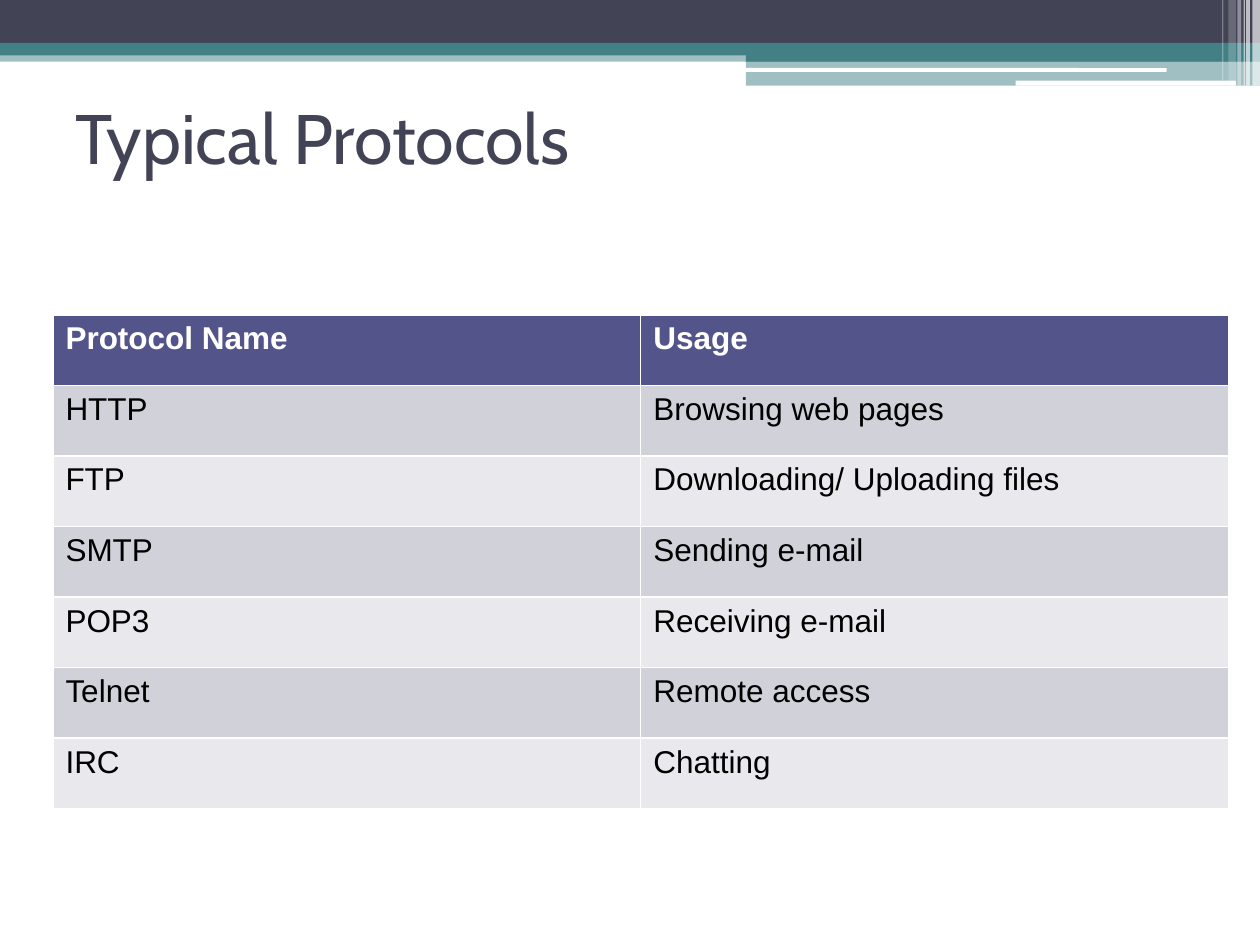
from lxml.etree import SubElement
from pptx import Presentation
from pptx.dml.color import RGBColor
from pptx.enum.shapes import MSO_SHAPE as Preset
from pptx.enum.text import MSO_ANCHOR, PP_ALIGN
from pptx.oxml.ns import qn
from pptx.util import Inches, Pt

WHITE = RGBColor(0xFF, 0xFF, 0xFF)
BLACK = RGBColor(0, 0, 0)
SLATE = RGBColor(0x42, 0x44, 0x56)
TEAL = RGBColor(0x43, 0x80, 0x86)
HEADER = RGBColor(0x53, 0x54, 0x8A)
ROW_BANDS = (RGBColor(0xD1, 0xD1, 0xDA), RGBColor(0xE9, 0xE9, 0xED))

TITLE = "Typical Protocols"
PROTOCOLS = [
    ("Protocol Name", "Usage"),
    ("HTTP", "Browsing web pages"),
    ("FTP", "Downloading/ Uploading files"),
    ("SMTP", "Sending e-mail"),
    ("POP3", "Receiving e-mail"),
    ("Telnet", "Remote access"),
    ("IRC", "Chatting"),
]

SLIDE_W, SLIDE_H = 10, 7.5
STEP_X = 5.92  # where the banner steps down
TABLE_X, TABLE_Y, TABLE_W, ROW_H = 0.42, 2.5, 9.33, 0.56

# Banner: left, top, width, height, colour, opacity in percent
BANDS = [
    (0, 0.4, SLIDE_W, 0.09, TEAL, 50),
    (0, 0, SLIDE_W, 0.34, SLATE, 100),
    (0, 0.34, SLIDE_W, 0.1, TEAL, 100),
    (STEP_X, 0.39, SLIDE_W - STEP_X, 0.1, TEAL, 100),
    (STEP_X, 0.48, SLIDE_W - STEP_X, 0.2, TEAL, 50),
]
# Rounded white bars: left, top, width, height
BARS = [(5.91, 0.54, 3.35, 0.03), (8.06, 0.64, 1.75, 0.04)]
# Pale stripes at the right end: left, width, height, opacity
STRIPES = [
    (9.94, 0.06, 0.68, 65),
    (9.89, 0.03, 0.68, 65),
    (9.87, 0.01, 0.68, 60),
    (9.82, 0.03, 0.68, 40),
    (9.75, 0.06, 0.64, 20),
    (9.7, 0.01, 0.64, 30),
]


def add_block(slide, box, colour, opacity=100, preset=Preset.RECTANGLE):
    block = slide.shapes.add_shape(preset, *map(Inches, box))
    block.shadow.inherit = False
    block.line.fill.background()
    block.fill.solid()
    block.fill.fore_color.rgb = colour
    if opacity < 100:
        tint = block.fill._xPr.find(".//" + qn("a:srgbClr"))
        SubElement(tint, qn("a:alpha"), val=str(opacity * 1000))


def style_font(font, name, size, colour, bold=False):
    font.name, font.size, font.bold = name, Pt(size), bold
    font.color.rgb = colour


def add_banner(slide):
    for *box, colour, opacity in BANDS:
        add_block(slide, box, colour, opacity)
    for box in BARS:
        add_block(slide, box, WHITE, preset=Preset.ROUNDED_RECTANGLE)
    for left, width, height, opacity in STRIPES:
        add_block(slide, (left, 0, width, height), WHITE, opacity)


def set_title(slide):
    title = slide.shapes.title
    title.left, title.top, title.width, title.height = map(Inches, (0.5, 0.5, 9, 1.17))
    title.text = TITLE
    title.text_frame.vertical_anchor = MSO_ANCHOR.MIDDLE
    heading = title.text_frame.paragraphs[0]
    heading.alignment = PP_ALIGN.LEFT
    style_font(heading.font, "Cabin", 40, SLATE)


def add_protocol_table(slide):
    # The default table style supplies the white rules
    rows, cols = len(PROTOCOLS), len(PROTOCOLS[0])
    box = map(Inches, (TABLE_X, TABLE_Y, TABLE_W, ROW_H * rows))
    table = slide.shapes.add_table(rows, cols, *box).table
    for r, entries in enumerate(PROTOCOLS):
        is_header = r == 0
        for c, entry in enumerate(entries):
            cell = table.cell(r, c)
            cell.text = entry
            cell.fill.solid()
            cell.fill.fore_color.rgb = HEADER if is_header else ROW_BANDS[(r - 1) % 2]
            style_font(cell.text_frame.paragraphs[0].font, "Arial", 18,
                       WHITE if is_header else BLACK, is_header)


def main():
    deck = Presentation()
    deck.slide_width, deck.slide_height = Inches(SLIDE_W), Inches(SLIDE_H)
    slide = deck.slides.add_slide(deck.slide_layouts[5])  # title only
    add_banner(slide)
    set_title(slide)
    add_protocol_table(slide)
    deck.save("out.pptx")


if __name__ == "__main__":
    main()
